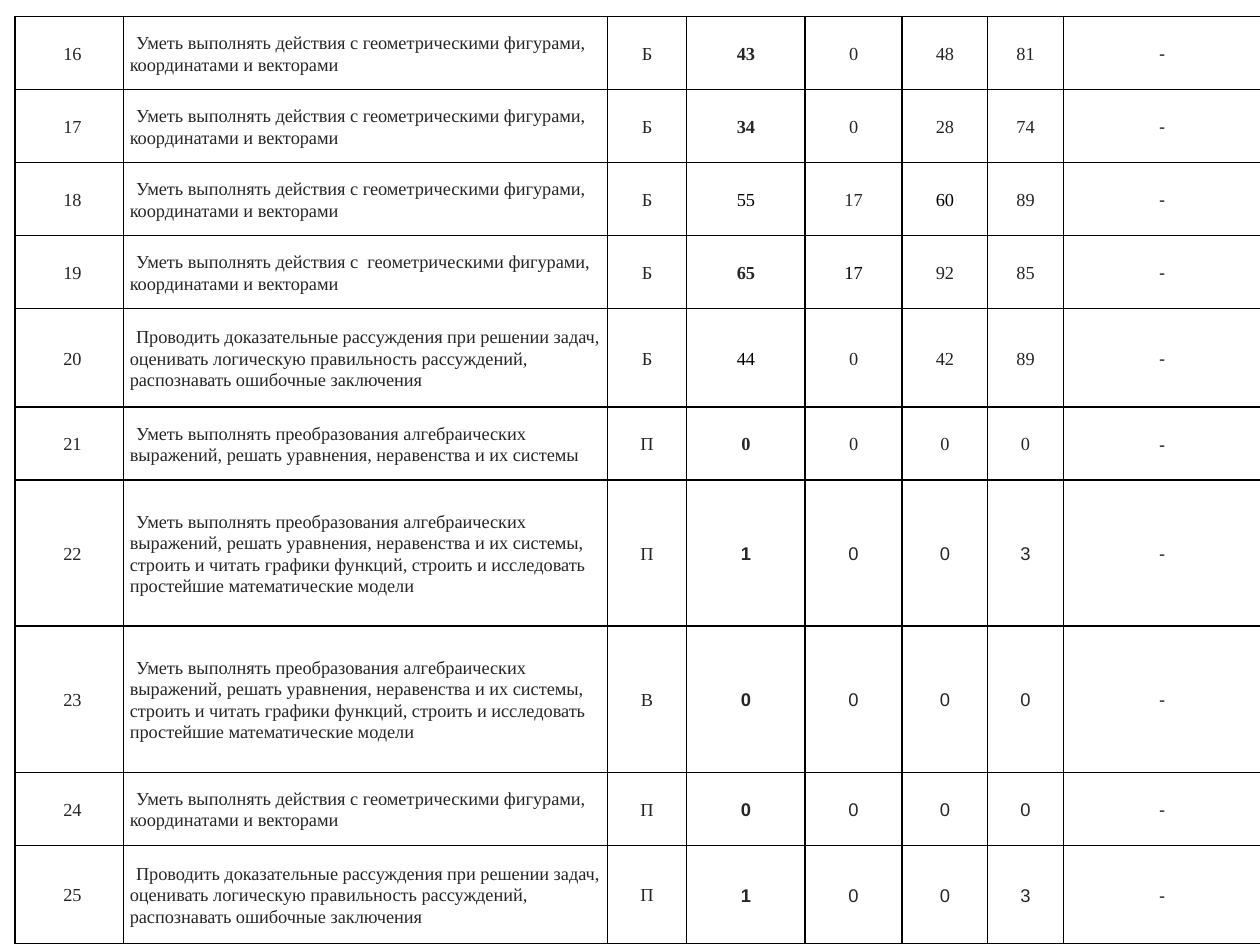
from lxml.etree import SubElement
from pptx import Presentation
from pptx.dml.color import RGBColor
from pptx.enum.text import MSO_ANCHOR, PP_ALIGN
from pptx.oxml.ns import qn
from pptx.util import Inches, Pt

INK, BLACK, WHITE = "262626", "000000", "FFFFFF"
SERIF, SANS = "Times New Roman", "Arial"

FIGURES = "Уметь выполнять действия с геометрическими фигурами, координатами и векторами"
FIGURES_WIDE = "Уметь выполнять действия с  геометрическими фигурами, координатами и векторами"
PROOFS = ("Проводить доказательные рассуждения при решении задач, оценивать логическую "
          "правильность рассуждений, распознавать ошибочные заключения")
ALGEBRA = ("Уметь выполнять преобразования алгебраических выражений, решать уравнения, "
           "неравенства и их системы")
MODELS = (ALGEBRA + ", строить и читать графики функций, строить и исследовать "
          "простейшие математические модели")

# Task number, skill, level, average result, results of three groups
TASKS = [
    (16, FIGURES, "Б", 43, 0, 48, 81),
    (17, FIGURES, "Б", 34, 0, 28, 74),
    (18, FIGURES, "Б", 55, 17, 60, 89),
    (19, FIGURES_WIDE, "Б", 65, 17, 92, 85),
    (20, PROOFS, "Б", 44, 0, 42, 89),
    (21, ALGEBRA, "П", 0, 0, 0, 0),
    (22, MODELS, "П", 1, 0, 0, 3),
    (23, MODELS, "В", 0, 0, 0, 0),
    (24, FIGURES, "П", 0, 0, 0, 0),
    (25, PROOFS, "П", 1, 0, 0, 3),
]
NUMBER, SKILL, LEVEL, AVERAGE = range(4)
LAST = 7
COLUMN_WIDTHS = [0.86, 3.84, 0.63, 0.94, 0.77, 0.68, 0.6, 1.57]
ROW_HEIGHTS = {FIGURES: 0.58, FIGURES_WIDE: 0.58, ALGEBRA: 0.58, PROOFS: 0.78, MODELS: 1.16}
INDENTS = {NUMBER: 0.05, SKILL: 0.05, LEVEL: -0.08}
BLACK_CELLS = {(18, AVERAGE), (18, 5), (19, 4), (20, AVERAGE)}
REGULAR_AVERAGES = {18, 20}
FIRST_SANS_TASK = 22


def color(hex_value):
    return RGBColor.from_string(hex_value)


class TableSlide:
    def __init__(self, slide, size=10.5, line_spacing=1.06):
        self.slide = slide
        self.size = size
        self.line_spacing = line_spacing

    def add_grid(self, left, top, widths, heights):
        frame = self.slide.shapes.add_table(
            len(heights), len(widths), Inches(left), Inches(top),
            Inches(sum(widths)), Inches(sum(heights)))
        grid = frame.table
        grid.first_row = grid.horz_banding = False
        for column, width in zip(grid.columns, widths):
            column.width = Inches(width)
        for row, height in zip(grid.rows, heights):
            row.height = Inches(height)
        return grid

    def add_borders(self, cell, line_color=BLACK, width=1):
        properties = cell._tc.get_or_add_tcPr()
        for side in ("lnL", "lnR", "lnT", "lnB"):
            line = SubElement(properties, qn(f"a:{side}"), w=str(Pt(width)))
            fill = SubElement(line, qn("a:solidFill"))
            SubElement(fill, qn("a:srgbClr"), val=line_color)

    def fill_cell(self, cell, text, font_name, ink, bold, align, indent):
        self.add_borders(cell)
        cell.fill.solid()
        cell.fill.fore_color.rgb = color(WHITE)
        cell.vertical_anchor = MSO_ANCHOR.MIDDLE
        cell.margin_left = cell.margin_right = Inches(0.05)
        cell.margin_top, cell.margin_bottom = Inches(0.01), 0

        cell.text_frame.text = text
        paragraph = cell.text_frame.paragraphs[0]
        paragraph.alignment = align
        paragraph.line_spacing = self.line_spacing
        paragraph._p.get_or_add_pPr().set("indent", str(Inches(indent)))
        font = paragraph.runs[0].font
        font.name, font.size, font.bold = font_name, Pt(self.size), bold
        font.color.rgb = color(ink)


def main():
    presentation = Presentation()
    presentation.slide_width, presentation.slide_height = Inches(10), Inches(7.5)
    results = TableSlide(presentation.slides.add_slide(presentation.slide_layouts[6]))
    heights = [ROW_HEIGHTS[task[SKILL]] for task in TASKS]
    grid = results.add_grid(0.12, 0.13, COLUMN_WIDTHS, heights)

    for row, task in enumerate(TASKS):
        number = task[NUMBER]
        for column, value in enumerate((*task, "-")):
            sans = column == LAST or (column >= AVERAGE and number >= FIRST_SANS_TASK)
            results.fill_cell(
                grid.cell(row, column), str(value),
                font_name=SANS if sans else SERIF,
                ink=BLACK if (number, column) in BLACK_CELLS else INK,
                bold=column == AVERAGE and number not in REGULAR_AVERAGES,
                align=PP_ALIGN.LEFT if column == SKILL else PP_ALIGN.CENTER,
                indent=INDENTS.get(column, 0))

    presentation.save("out.pptx")


if __name__ == "__main__":
    main()
